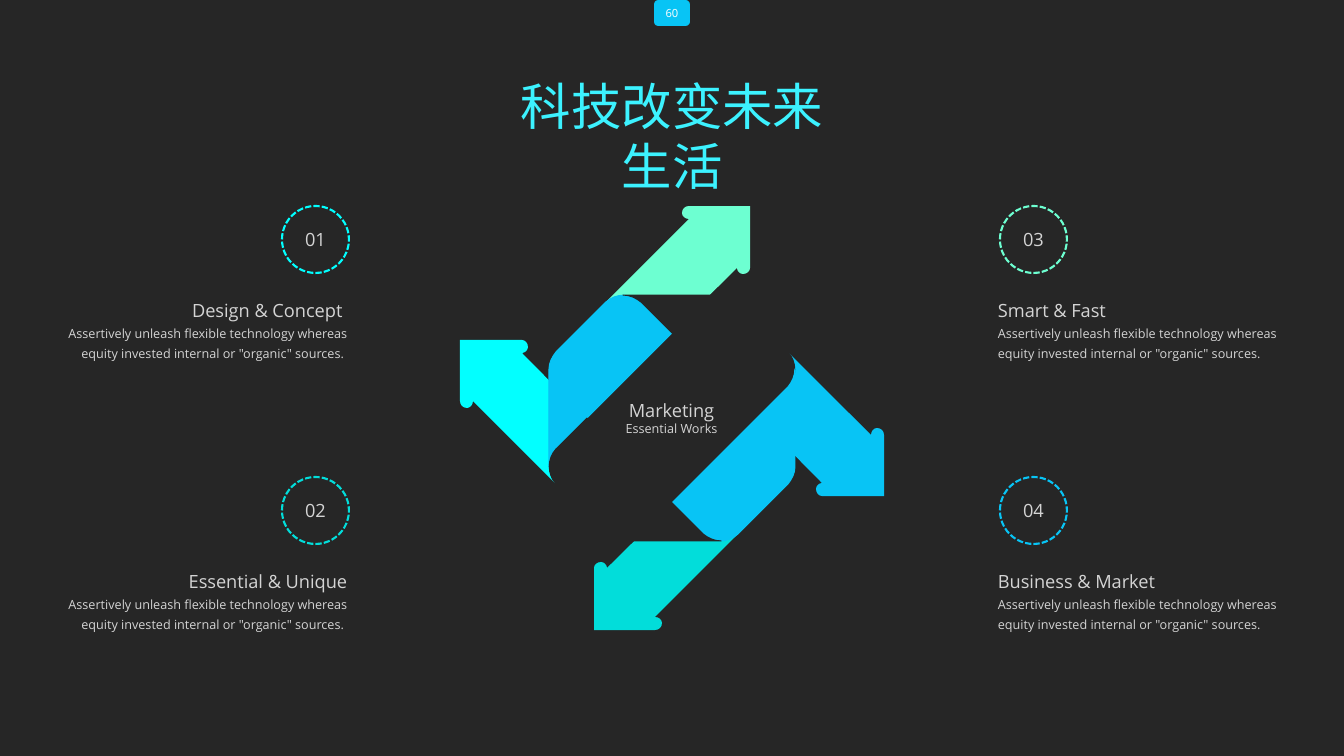
"""Build the dark four-arrow cycle slide with numbered captions."""
from typing import NamedTuple

from lxml import etree
from pptx import Presentation
from pptx.dml.color import RGBColor
from pptx.enum.dml import MSO_LINE
from pptx.enum.shapes import MSO_SHAPE
from pptx.enum.text import MSO_ANCHOR, MSO_AUTO_SIZE, PP_ALIGN
from pptx.oxml.ns import qn
from pptx.util import Pt

LEFT, CENTER, RIGHT = PP_ALIGN.LEFT, PP_ALIGN.CENTER, PP_ALIGN.RIGHT
ROUNDED, OVAL = MSO_SHAPE.ROUNDED_RECTANGLE, MSO_SHAPE.OVAL
MIDDLE = MSO_ANCHOR.MIDDLE
FIT_TEXT = MSO_AUTO_SIZE.SHAPE_TO_FIT_TEXT
DASH = MSO_LINE.SQUARE_DOT

SLIDE_W, SLIDE_H = 1344, 756
EMU_PER_PX = 914400 / 100.8
CENTER_X, CENTER_Y = 672, 418
CIRCLE = 67
LATIN, CJK = "Open Sans", "Noto Sans CJK SC"
COLORS = {
    "back": "262626", "blue": "08C4F5", "cyan": "02FFFF", "mint": "6DFFD1",
    "teal": "02DDDA", "text": "D4D4D4", "white": "FFFFFF", "title": "3CF2FF",
}

Point = tuple[int, int]
Outline = list[list[Point]]


class Box(NamedTuple):
    x: int
    y: int
    w: int
    h: int


class Line(NamedTuple):
    text: str
    size: int
    color: str = "text"
    font: str = LATIN


class Caption(NamedTuple):
    number: str
    heading: str
    body: str
    color: str
    circle_x: int
    circle_y: int
    text_box: Box
    align: PP_ALIGN


BODY = ('Assertively unleash flexible technology whereas equity invested '
        'internal or "organic" sources.')
CAPTIONS = [
    Caption("01", "Design & Concept ", BODY + " ", "cyan", 282, 206,
            Box(43, 288, 314, 79), RIGHT),
    Caption("02", "Essential & Unique", BODY + " ", "teal", 282, 477,
            Box(43, 559, 314, 79), RIGHT),
    Caption("03", "Smart & Fast", BODY, "mint", 1000, 206,
            Box(988, 288, 301, 79), LEFT),
    Caption("04", "Business & Market", BODY, "blue", 1000, 477,
            Box(988, 559, 301, 79), LEFT),
]

ARROW: Outline = [
    [(-150, -78)],
    [(-147, -78), (-144, -75), (-144, -71)],
    [(-144, -68), (-147, -65), (-150, -65)],
    [(-68, 18)], [(-116, 66)], [(-199, -17)],
    [(-199, -13), (-202, -10), (-205, -10)],
    [(-209, -10), (-212, -13), (-212, -17)],
    [(-212, -78)],
]
BAND: Outline = [
    [(-31, -116)],
    [(-41, -125), (-56, -125), (-66, -116)],
    [(-116, -66)],
    [(-120, -61), (-123, -55), (-123, -49)],
    [(-123, 49)],
    [(-123, 42), (-120, 36), (-116, 31)],
    [(0, -85)],
]
ARROW_COLORS = ["cyan", "mint", "blue", "teal"]
BAND_COLORS = ["blue", "back", "blue", "back"]


def px(value: int) -> int:
    return round(value * EMU_PER_PX)


def rgb(name: str) -> RGBColor:
    return RGBColor.from_string(COLORS[name])


def bend(sp, outline: Outline) -> None:
    """Turn each three-point run of lines into one Bézier curve."""
    steps = iter(sp._element.findall(".//" + qn("a:lnTo")))
    for segment in outline[1:]:
        group = [next(steps) for _ in segment]
        if len(group) == 3:
            curve = etree.Element(qn("a:cubicBezTo"))
            group[0].addprevious(curve)
            for step in group:
                curve.append(step[0])
                step.getparent().remove(step)


def add_turned(s, outline: Outline, turns: int, color: str, outlined: bool) -> None:
    points = [point for segment in outline for point in segment]
    for _ in range(turns):
        points = [(-y, x) for x, y in points]
    placed = [(px(CENTER_X + x), px(CENTER_Y + y)) for x, y in points]
    builder = s.shapes.build_freeform(*placed[0], scale=1.0)
    builder.add_line_segments(placed[1:], close=True)
    sp = builder.convert_to_shape()
    bend(sp, outline)
    sp.shadow.inherit = False
    sp.fill.solid()
    sp.fill.fore_color.rgb = rgb(color)
    if outlined:
        sp.line.color.rgb = rgb(color)
        sp.line.width = Pt(0.75)
    else:
        sp.line.fill.background()


def write(sp, lines: list[Line], align: PP_ALIGN, spacing: float = 1.0,
          wrap: bool = True) -> None:
    tf = sp.text_frame
    tf.word_wrap = wrap
    for i, line in enumerate(lines):
        p = tf.add_paragraph() if i else tf.paragraphs[0]
        p.alignment = align
        p.line_spacing = spacing
        p.add_run().text = line.text
        p.font.size = Pt(line.size)
        p.font.color.rgb = rgb(line.color)
        p.font.name = line.font
        east_asian = etree.SubElement(p._p.pPr.find(qn("a:defRPr")), qn("a:ea"))
        east_asian.set("typeface", line.font)


def add_text(s, box: Box, lines: list[Line], align: PP_ALIGN, spacing: float = 1.0,
             wrap: bool = True) -> None:
    sp = s.shapes.add_textbox(*map(px, box))
    write(sp, lines, align, spacing, wrap)
    sp.text_frame.auto_size = FIT_TEXT


def add_badge(s) -> None:
    sp = s.shapes.add_shape(ROUNDED, *map(px, Box(654, 0, 36, 26)))
    sp.shadow.inherit = False
    sp.fill.solid()
    sp.fill.fore_color.rgb = rgb("blue")
    sp.line.fill.background()
    sp.text_frame.vertical_anchor = MIDDLE
    write(sp, [Line("60", 8, "white")], CENTER, wrap=False)


def add_caption(s, caption: Caption) -> None:
    add_text(s, caption.text_box, [Line(caption.heading, 13), Line(caption.body, 9)],
             caption.align, spacing=1.3)
    sp = s.shapes.add_shape(
        OVAL, *map(px, Box(caption.circle_x, caption.circle_y, CIRCLE, CIRCLE)))
    sp.shadow.inherit = False
    sp.fill.background()
    sp.line.color.rgb = rgb(caption.color)
    sp.line.width = Pt(1.5)
    sp.line.dash_style = DASH
    sp.text_frame.vertical_anchor = MIDDLE
    write(sp, [Line(caption.number, 13)], CENTER)


def main() -> None:
    prs = Presentation()
    prs.slide_width, prs.slide_height = px(SLIDE_W), px(SLIDE_H)
    s = prs.slides.add_slide(prs.slide_layouts[6])
    s.background.fill.solid()
    s.background.fill.fore_color.rgb = rgb("back")
    add_badge(s)
    for turns, color in enumerate(ARROW_COLORS):
        add_turned(s, ARROW, turns, color, outlined=False)
    for turns, color in enumerate(BAND_COLORS):
        add_turned(s, BAND, turns, color, outlined=True)
    add_text(s, Box(615, 394, 113, 47),
             [Line("Marketing", 13), Line("Essential Works", 9)], CENTER, wrap=False)
    for caption in CAPTIONS:
        add_caption(s, caption)
    add_text(s, Box(509, 70, 326, 72), [Line("科技改变未来生活", 36, "title", CJK)], CENTER)
    prs.save("out.pptx")


if __name__ == "__main__":
    main()
